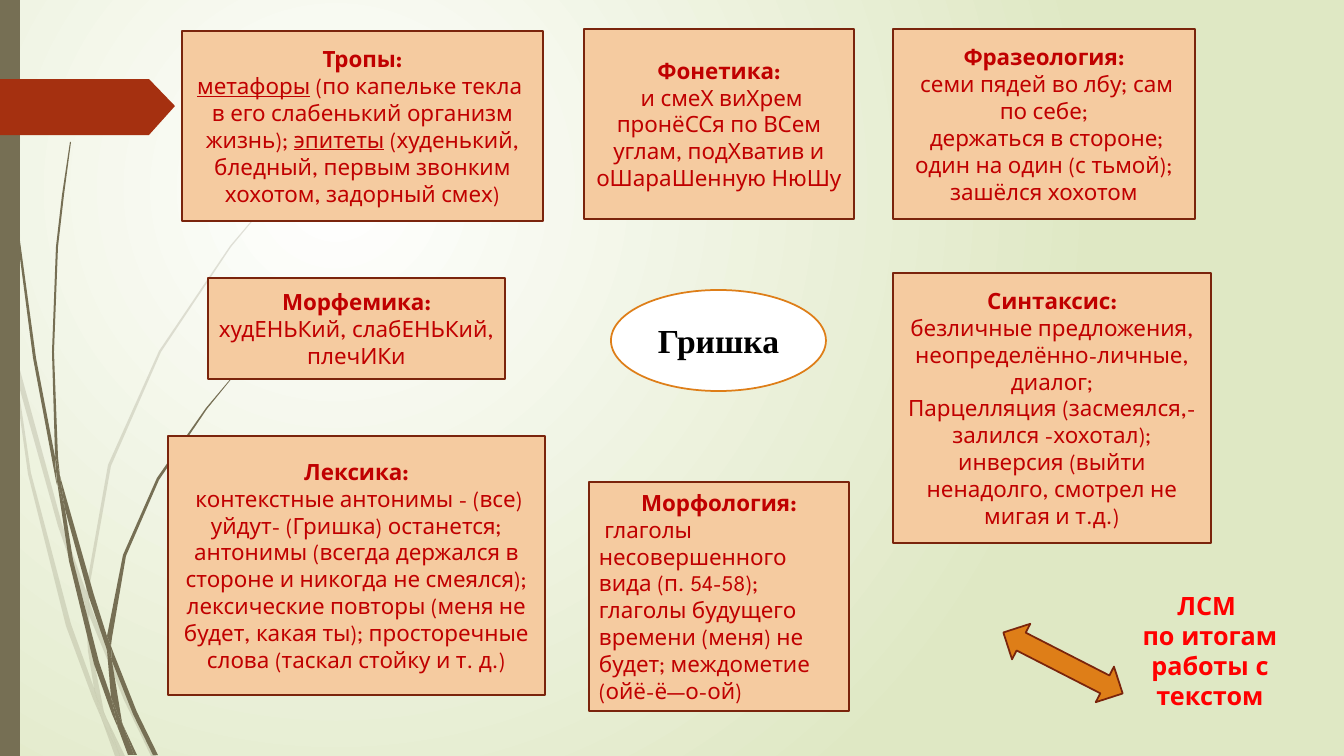
from lxml import etree
from pptx import Presentation
from pptx.dml.color import RGBColor
from pptx.enum.lang import MSO_LANGUAGE_ID
from pptx.enum.shapes import MSO_SHAPE
from pptx.enum.text import MSO_ANCHOR, PP_ALIGN
from pptx.oxml.ns import qn
from pptx.util import Emu, Pt

RECT, OVAL, ARROW = MSO_SHAPE.RECTANGLE, MSO_SHAPE.OVAL, MSO_SHAPE.LEFT_RIGHT_ARROW
CENTER, LEFT = PP_ALIGN.CENTER, PP_ALIGN.LEFT
MIDDLE, TOP = MSO_ANCHOR.MIDDLE, MSO_ANCHOR.TOP
RUSSIAN = MSO_LANGUAGE_ID.RUSSIAN

W, H = 1344, 756
PX = 12192000 / W
COLORS = {
    "white": "FFFFFF", "meadow": "DFE8C4", "wisp": "766F54", "ribbon": "A53010",
    "card": "F5CBA0", "edge": "7A240C", "orange": "DE7E18",
    "text": "C00000", "black": "000000", "red": "FF0000",
}
CARD_FONT = {"name": "League Spartan", "size": Pt(16), "bold": False, "language_id": RUSSIAN}
HUB_FONT = {"name": "Times New Roman", "size": Pt(24), "bold": True, "language_id": RUSSIAN}
LABEL_FONT = {"name": "League Spartan", "size": Pt(18), "bold": True, "language_id": RUSSIAN}
TITLE, UNDERLINED = {"bold": True}, {"underline": True}

CARDS = [
    ((182, 31, 361, 190), "Тропы:", [[
        ("метафоры", UNDERLINED), (" (по капельке текла  в его слабенький организм жизнь); ", {}),
        ("эпитеты", UNDERLINED), (" (худенький, бледный, первым звонким хохотом, задорный смех)", {})]], CENTER),
    ((584, 29, 270, 190), "Фонетика:", [[
        (" и смеХ виХрем пронёССя по ВСем углам, подХватив и оШараШенную НюШу", {})]], CENTER),
    ((893, 29, 302, 190), "Фразеология:", [
        [(" семи пядей во лбу; сам по себе;", {})],
        [(" держаться в стороне; один на один (с тьмой); зашёлся хохотом", {})]], CENTER),
    ((208, 278, 297, 101), "Морфемика:", [[
        ("худЕНЬКий, слабЕНЬКий, плечИКи", {})]], CENTER),
    ((893, 273, 318, 270), "Синтаксис:", [
        [("безличные предложения, неопределённо-личные, диалог;", {})],
        [("Парцелляция (засмеялся,- залился -хохотал); инверсия "
          "(выйти ненадолго, смотрел не мигая и т.д.)", {})]], CENTER),
    ((168, 436, 377, 259), "Лексика:", [[
        (" контекстные антонимы - (все) уйдут- (Гришка) останется; антонимы (всегда держался "
         "в стороне и никогда не смеялся); лексические повторы (меня не будет, какая ты); "
         "просторечные слова (таскал стойку и т. д.)", {})]], CENTER),
    ((589, 482, 260, 229), "Морфология:", [[
        (" глаголы несовершенного вида (п. 54-58);  глаголы будущего времени (меня) не будет; "
         "междометие (ойё-ё—о-ой)", {})]], LEFT),
]
HUB = ((611, 290, 215, 101), "Гришка")
LABEL = ((1131, 585, 158, 132), ["ЛСМ ", "по итогам работы с текстом"])
ARROW_BOX, ARROW_TURN = (996, 643, 134, 40), 27.1
STRIPE = (0, 0, 20, 756)
RIBBON = [(0, 79), (149, 79), (175, 106), (149, 135), (0, 135)]

PALE_BLADES = [
    [(11, 353), (9, 325), (0, 284), (0, 301), (10, 347)],
    [(58, 526), (85, 604), (86, 591), (62, 524), (14, 348), (17, 379)],
    [(93, 612), (89, 601), (89, 615), (124, 700), (151, 756), (156, 756), (128, 698)],
    [(120, 756), (125, 756), (106, 717)],
    [(94, 688), (71, 624), (31, 473), (17, 379), (11, 353), (28, 474), (66, 626), (93, 699),
     (102, 720), (100, 713)],
    [(85, 604), (88, 651), (94, 688), (97, 698), (106, 717), (104, 712), (92, 651), (89, 615), (89, 613)],
    [(89, 589), (111, 466), (161, 352), (231, 247), (270, 200), (292, 176), (314, 155), (314, 154),
     (291, 176), (270, 199), (230, 246), (159, 351), (108, 465), (86, 589), (86, 591), (89, 601)],
    [(102, 720), (115, 756), (120, 756)],
    [(89, 613), (89, 615), (89, 601), (86, 591), (85, 604)],
    [(97, 698), (94, 688), (100, 713), (102, 720), (120, 756), (106, 717)],
]
DARK_BLADES = [
    [(7, 111), (17, 235), (33, 358), (56, 481), (57, 485), (55, 461), (55, 457), (36, 358),
     (19, 234), (8, 110), (5, 48), (4, 0), (3, 0), (4, 48)],
    [(89, 597), (107, 650), (107, 638), (107, 636), (94, 595), (60, 476), (65, 509)],
    [(114, 654), (111, 646), (112, 661), (133, 714), (153, 755), (158, 755), (137, 712)],
    [(111, 697), (99, 662), (73, 560), (65, 509), (57, 481), (69, 561), (94, 664), (112, 714),
     (118, 728), (117, 723)],
    [(60, 476), (58, 457), (54, 352), (58, 247), (64, 195), (71, 142), (70, 142), (62, 195),
     (56, 247), (52, 352), (55, 453)],
    [(134, 755), (137, 755), (123, 725)],
    [(57, 481), (65, 509), (60, 476), (55, 453), (55, 457)],
    [(112, 638), (126, 556), (159, 480), (207, 409), (233, 377), (247, 362), (263, 347), (262, 347),
     (247, 361), (233, 376), (206, 408), (157, 478), (123, 555), (107, 636), (111, 646)],
    [(118, 728), (128, 755), (132, 755)],
    [(107, 650), (111, 697), (117, 712), (123, 725), (122, 722), (112, 661), (110, 656)],
    [(107, 650), (110, 656), (112, 661), (111, 646), (107, 636)],
    [(117, 712), (111, 697), (117, 723), (118, 728), (131, 755), (134, 755), (123, 725)],
]


def rgb(name):
    return RGBColor.from_string(COLORS[name])


def emu(lengths):
    return [Emu(round(v * PX)) for v in lengths]


def paint(sp, fill, line=None):
    sp.shadow.inherit = False
    sp.fill.solid()
    sp.fill.fore_color.rgb = rgb(fill)
    if line:
        sp.line.color.rgb = rgb(line)
        sp.line.width = Pt(1.25)
    else:
        sp.line.fill.background()
    return sp


def add_box(s, kind, box, fill, line=None):
    return paint(s.shapes.add_shape(kind, *emu(box)), fill, line)


def add_outline(s, points, fill):
    fb = s.shapes.build_freeform(*emu(points[0]), scale=1.0)
    fb.add_line_segments([emu(pt) for pt in points[1:]], close=True)
    return paint(fb.convert_to_shape(), fill)


def write(sp, paragraphs, font, color, anchor):
    tf = sp.text_frame
    tf.word_wrap = True
    tf.vertical_anchor = anchor
    for i, (align, runs) in enumerate(paragraphs):
        p = tf.paragraphs[0] if i == 0 else tf.add_paragraph()
        p.alignment = align
        for text, extra in runs:
            r = p.add_run()
            r.text = text
            for key, value in {**font, **extra}.items():
                setattr(r.font, key, value)
            r.font.color.rgb = rgb(color)


def set_background(s):
    fill = s.background.fill
    fill.gradient()
    for stop, position, name in zip(fill.gradient_stops, (0, 1), ("white", "meadow")):
        stop.position = position
        stop.color.rgb = rgb(name)
    grad = s.background._cSld.find(".//" + qn("a:gradFill"))
    grad.remove(grad.find(qn("a:lin")))
    circle = etree.SubElement(grad, qn("a:path"), {"path": "circle"})
    etree.SubElement(circle, qn("a:fillToRect"), dict(l="50000", t="50000", r="100000", b="100000"))


def main():
    prs = Presentation()
    prs.slide_width, prs.slide_height = emu((W, H))
    s = prs.slides.add_slide(prs.slide_layouts[6])
    set_background(s)

    for points in PALE_BLADES:
        sp = add_outline(s, points, "wisp")
        color = sp._element.spPr.find(qn("a:solidFill"))[0]
        etree.SubElement(color, qn("a:alpha"), val="20000")
    for points in DARK_BLADES:
        add_outline(s, points, "wisp")
    add_box(s, RECT, STRIPE, "wisp")
    add_outline(s, RIBBON, "ribbon")

    box, name = HUB
    write(add_box(s, OVAL, box, "white", "orange"), [(CENTER, [(name, {})])], HUB_FONT, "black", MIDDLE)

    for box, title, body, align in CARDS:
        paragraphs = [(CENTER, [(title, TITLE)])] + [(align, runs) for runs in body]
        write(add_box(s, RECT, box, "card", "edge"), paragraphs, CARD_FONT, "text", MIDDLE)

    box, lines = LABEL
    write(s.shapes.add_textbox(*emu(box)), [(CENTER, [(text, {})]) for text in lines],
          LABEL_FONT, "red", TOP)
    add_box(s, ARROW, ARROW_BOX, "orange", "edge").rotation = ARROW_TURN

    prs.save("out.pptx")


if __name__ == "__main__":
    main()
